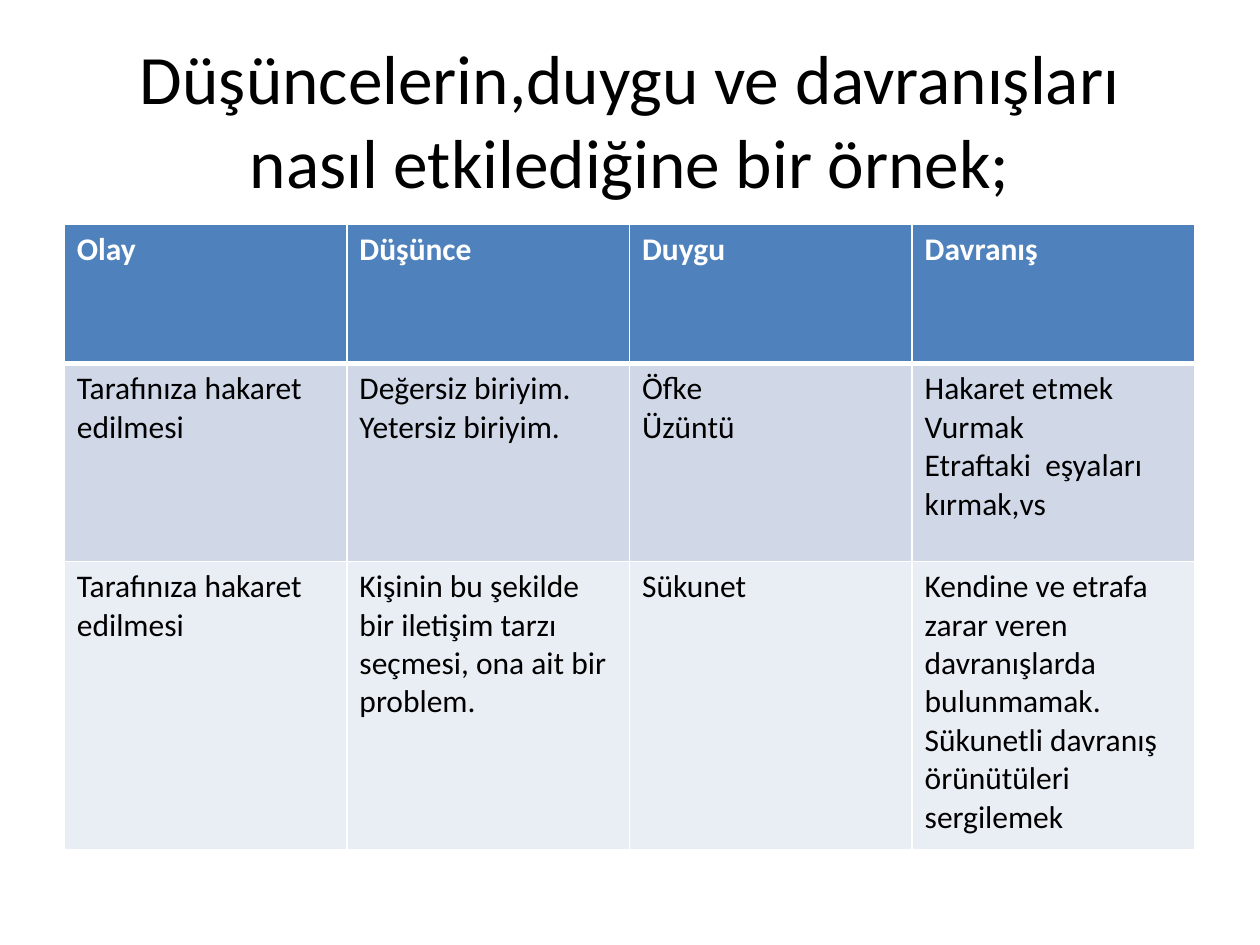
from pptx import Presentation
from pptx import util as u
from pptx.dml.color import RGBColor
from pptx.enum import text
from pptx.oxml import parse_xml
from pptx.oxml.ns import nsdecls

TITLE = "Düşüncelerin,duygu ve davranışları nasıl etkilediğine bir örnek;"
ROWS = [
    [["Olay"], ["Düşünce"], ["Duygu"], ["Davranış"]],
    [
        ["Tarafınıza hakaret edilmesi"],
        ["Değersiz biriyim.", "Yetersiz biriyim."],
        ["Öfke", "Üzüntü"],
        ["Hakaret etmek", "Vurmak", "Etraftaki  eşyaları kırmak,vs"],
    ],
    [
        ["Tarafınıza hakaret edilmesi"],
        ["Kişinin bu şekilde bir iletişim tarzı seçmesi, ona ait bir problem."],
        ["Sükunet"],
        [
            "Kendine ve etrafa zarar veren davranışlarda bulunmamak.",
            "Sükunetli davranış örünütüleri sergilemek",
        ],
    ],
]
THEME = {
    "font": "Calibri",
    "title_size": 39.6,
    "body_size": 18,
    "ink": "000000",
    "light": "FFFFFF",
    "header": "4F81BD",
    "bands": ["D0D8E8", "E9EDF4"],
}
SLIDE_SIZE = (720, 540)
TITLE_BOX = (36, 19.4, 648, 97)
TABLE_ORIGIN = (36.75, 128.25)
COLUMN_WIDTH = 161.5
ROW_HEIGHTS = [79.5, 113, 165]


def write_text(frame, lines, *, size, color, bold=False, align=None):
    for index, line in enumerate(lines):
        paragraph = frame.add_paragraph() if index else frame.paragraphs[0]
        paragraph.alignment = align
        run = paragraph.add_run()
        run.text = line
        run.font.name = THEME["font"]
        run.font.size = u.Pt(size)
        run.font.bold = bold
        run.font.color.rgb = RGBColor.from_string(color)


def set_borders(cell, **widths):
    properties = cell._tc.get_or_add_tcPr()
    for index, side in enumerate("LRTB"):
        width = u.Pt(widths.get(side, 1))
        properties.insert(index, parse_xml(
            f'<a:ln{side} {nsdecls("a")} w="{width}"><a:solidFill>'
            f'<a:srgbClr val="{THEME["light"]}"/></a:solidFill></a:ln{side}>'
        ))


def add_title(slide):
    box = slide.shapes.add_textbox(*map(u.Pt, TITLE_BOX))
    frame = box.text_frame
    frame.word_wrap = True
    frame.margin_top = frame.margin_bottom = 0
    frame.vertical_anchor = text.MSO_ANCHOR.MIDDLE
    write_text(frame, [TITLE], size=THEME["title_size"], color=THEME["ink"],
               align=text.PP_ALIGN.CENTER)


def add_example_table(slide):
    column_count = len(ROWS[0])
    size = (COLUMN_WIDTH * column_count, sum(ROW_HEIGHTS))
    table = slide.shapes.add_table(
        len(ROWS), column_count, *map(u.Pt, TABLE_ORIGIN + size)
    ).table
    for column in table.columns:
        column.width = u.Pt(COLUMN_WIDTH)
    fills = [THEME["header"], *THEME["bands"]]
    for row_index, row in enumerate(ROWS):
        table.rows[row_index].height = u.Pt(ROW_HEIGHTS[row_index])
        is_header = row_index == 0
        for column_index, lines in enumerate(row):
            cell = table.cell(row_index, column_index)
            cell.fill.solid()
            cell.fill.fore_color.rgb = RGBColor.from_string(fills[row_index])
            set_borders(cell, B=3 if is_header else 1, T=3 if row_index == 1 else 1)
            write_text(cell.text_frame, lines, size=THEME["body_size"], bold=is_header,
                       color=THEME["light"] if is_header else THEME["ink"])


def main():
    presentation = Presentation()
    presentation.slide_width, presentation.slide_height = map(u.Pt, SLIDE_SIZE)
    slide = presentation.slides.add_slide(presentation.slide_layouts[6])
    add_title(slide)
    add_example_table(slide)
    presentation.save("out.pptx")


if __name__ == "__main__":
    main()
